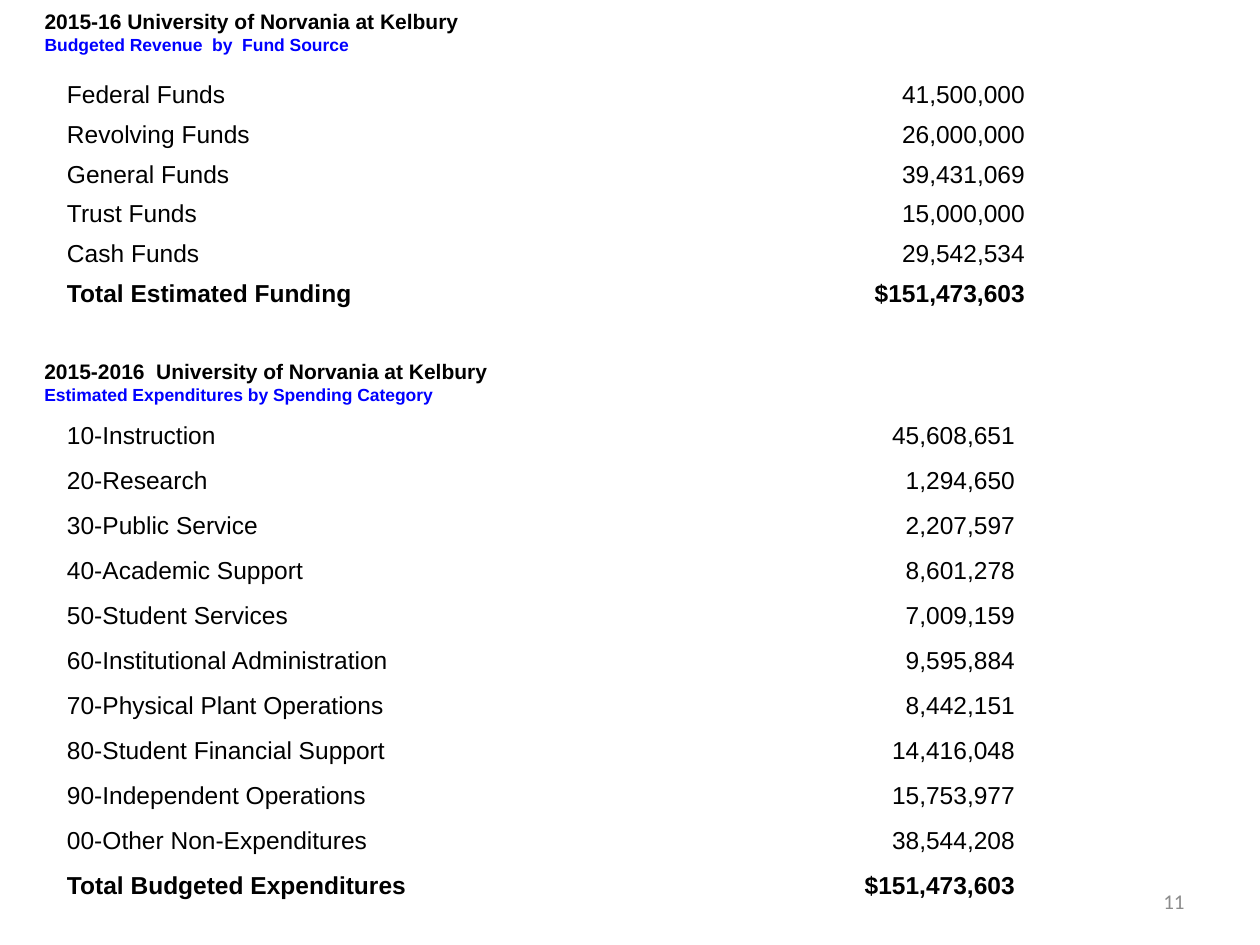
"""Build the campus budget slide: revenue by fund, spending by category."""
from pptx import Presentation, util as u
from pptx.dml.color import RGBColor
from pptx.enum import text as t

PX = 914400 // 126
BLACK, BLUE, GREY = "000000", "0000FF", "8C8C8C"

HEADS = [
    ("2015-16\u00a0University of Norvania at Kelbury",
     "Budgeted Revenue  by  Fund Source", (32, 2, 452, 59)),
    ("2015-2016 \u00a0University of Norvania at Kelbury",
     "Estimated Expenditures by Spending Category", (32, 352, 494, 59)),
]
FUNDS = [
    ("Federal Funds", "41,500,000"),
    ("Revolving Funds", "26,000,000"),
    ("General Funds", "39,431,069"),
    ("Trust Funds", "15,000,000"),
    ("Cash Funds", "29,542,534"),
    ("Total Estimated Funding", "$151,473,603"),
]
COSTS = [
    ("10-Instruction", "45,608,651"),
    ("20-Research", "1,294,650"),
    ("30-Public Service", "2,207,597"),
    ("40-Academic Support", "8,601,278"),
    ("50-Student Services", "7,009,159"),
    ("60-Institutional Administration", "9,595,884"),
    ("70-Physical Plant Operations", "8,442,151"),
    ("80-Student Financial Support", "14,416,048"),
    ("90-Independent Operations", "15,753,977"),
    ("00-Other Non-Expenditures", "38,544,208"),
    ("Total Budgeted Expenditures", "$151,473,603"),
]
TABLES = [
    (FUNDS, (63, 72), (512, 454), 38),
    (COSTS, (63, 408), (631, 325), 45),
]
PAGE = ("11", (903, 876, 294, 50))


def style(font, size, color, bold=False, name="Arial"):
    font.name, font.size, font.bold = name, u.Pt(size), bold
    font.color.rgb = RGBColor.from_string(color)


def place(shape, box):
    shape.left, shape.top, shape.width, shape.height = [n * PX for n in box]
    shape.text_frame.vertical_anchor = t.MSO_ANCHOR.MIDDLE
    shape.text_frame.word_wrap = True
    return shape.text_frame.paragraphs[0]


def add_head(shape, name, topic, box):
    para = place(shape, box)
    para.alignment = t.PP_ALIGN.LEFT
    for line, size, color in ((name, 12, BLACK), (topic, 10, BLUE)):
        if para.runs:
            para.add_line_break()
        run = para.add_run()
        run.text = line
        style(run.font, size, color, True)


def add_cell(cell, words, align, bold):
    cell.fill.background()
    cell.vertical_anchor = t.MSO_ANCHOR.BOTTOM
    cell.margin_left = cell.margin_right = 4 * PX
    cell.margin_top = cell.margin_bottom = 3 * PX
    para = cell.text_frame.paragraphs[0]
    para.text, para.alignment = words, align
    para.line_spacing, para.space_after = 1.15, u.Pt(10)
    style(para.font, 14, BLACK, bold)


def add_grid(slide, rows, spot, widths, high):
    left, top = spot
    frame = slide.shapes.add_table(
        len(rows), len(widths), left * PX, top * PX,
        sum(widths) * PX, len(rows) * high * PX)
    grid = frame.table
    grid.first_row = grid.horz_banding = False
    for col, wide in zip(grid.columns, widths):
        col.width = wide * PX
    sides = (t.PP_ALIGN.LEFT, t.PP_ALIGN.RIGHT)
    for r, row in enumerate(rows):
        for c, words in enumerate(row):
            add_cell(grid.cell(r, c), words, sides[c], r == len(rows) - 1)


def main():
    deck = Presentation()
    deck.slide_width, deck.slide_height = u.Inches(10), u.Inches(7.5)
    slide = deck.slides.add_slide(deck.slide_layouts[5])
    shapes = slide.shapes
    heads = (shapes.title, shapes.add_textbox(0, 0, 0, 0))
    for shape, head in zip(heads, HEADS):
        add_head(shape, *head)
    for table in TABLES:
        add_grid(slide, *table)
    label, box = PAGE
    para = place(shapes.add_textbox(0, 0, 0, 0), box)
    para.text, para.alignment = label, t.PP_ALIGN.RIGHT
    style(para.font, 12, GREY, name="Calibri")
    deck.save("out.pptx")


if __name__ == "__main__":
    main()
